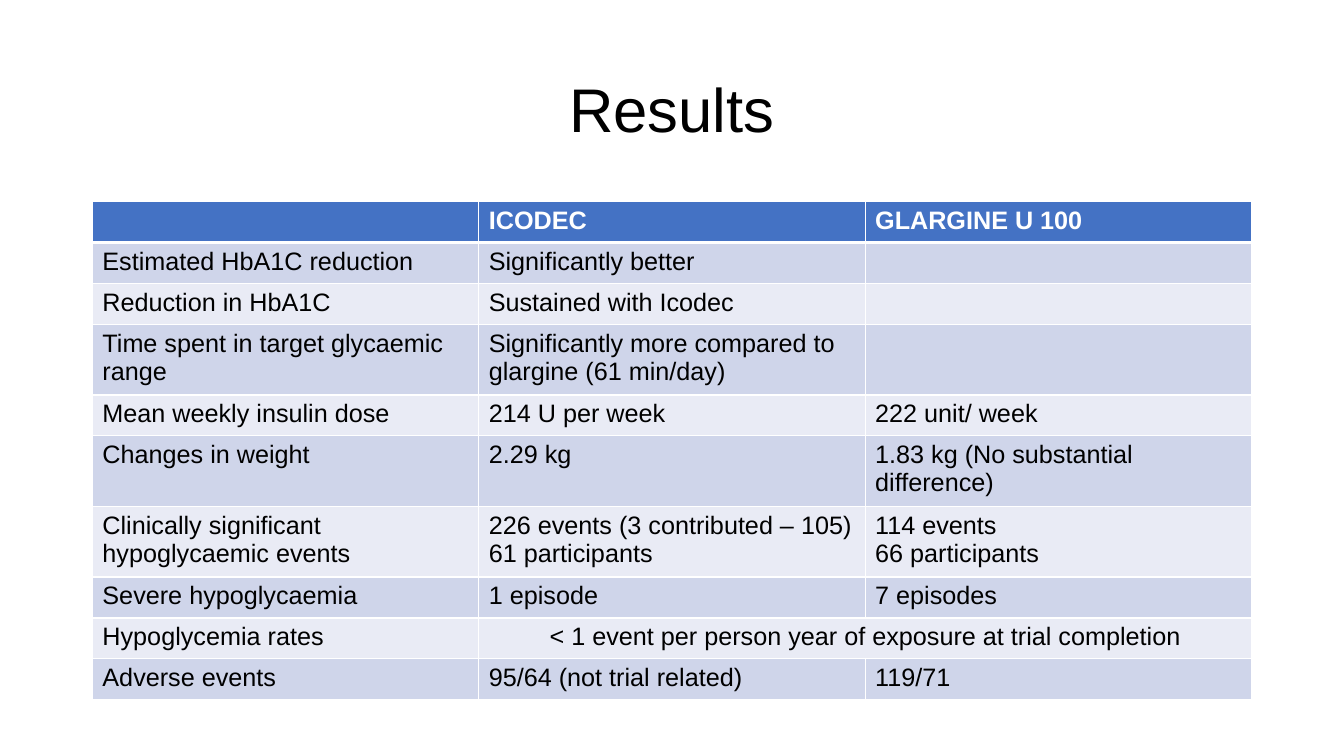
"""Build the Results slide comparing Icodec with Glargine U 100."""
import pptx
import pptx.dml.color
import pptx.enum.text
import pptx.oxml
import pptx.oxml.ns
import pptx.util

PIXEL = 9525
COLORS = {
    "text": "000000",
    "header": "4472C4",
    "odd": "CFD5EA",
    "even": "E9EBF5",
    "white": "FFFFFF",
}
CENTER = pptx.enum.text.PP_ALIGN.CENTER
LEFT = pptx.enum.text.PP_ALIGN.LEFT
RATES_ROW = 8
RESULTS = [
    ("", "ICODEC", "GLARGINE U 100"),
    ("Estimated HbA1C reduction", "Significantly better", ""),
    ("Reduction in HbA1C", "Sustained with Icodec", ""),
    ("Time spent in target glycaemic range",
     "Significantly more compared to glargine (61 min/day)", ""),
    ("Mean weekly insulin dose", "214 U per week", "222 unit/ week"),
    ("Changes in weight", "2.29 kg", "1.83 kg (No substantial difference)"),
    ("Clinically significant hypoglycaemic events",
     "226 events (3 contributed – 105)\n61 participants",
     "114 events\n66 participants"),
    ("Severe hypoglycaemia", "1 episode", "7 episodes"),
    ("Hypoglycemia rates",
     "< 1 event per person year of exposure at trial completion", ""),
    ("Adverse events", "95/64 (not trial related)", "119/71"),
]


def px(*lengths):
    """Turn whole pixels into EMU lengths."""
    return [pptx.util.Emu(length * PIXEL) for length in lengths]


def rgb(name):
    """Look up a named colour."""
    return pptx.dml.color.RGBColor.from_string(COLORS[name])


def write_text(text_frame, text, size, color="text", bold=False, **paragraph_format):
    """Fill a text frame and format every paragraph and run."""
    text_frame.text = text
    font_format = {"name": "Arial", "size": pptx.util.Pt(size), "bold": bold}
    for paragraph in text_frame.paragraphs:
        for name, value in paragraph_format.items():
            setattr(paragraph, name, value)
        for run in paragraph.runs:
            for name, value in font_format.items():
                setattr(run.font, name, value)
            run.font.color.rgb = rgb(color)


def add_title(slide, text):
    """Add the centred slide title."""
    text_frame = slide.shapes.add_textbox(*px(88, 38, 1104, 139)).text_frame
    frame_format = {
        "word_wrap": True,
        "vertical_anchor": pptx.enum.text.MSO_ANCHOR.MIDDLE,
    }
    for name, value in frame_format.items():
        setattr(text_frame, name, value)
    write_text(text_frame, text, 44, alignment=CENTER, line_spacing=0.9)


def add_borders(cell, widths):
    """Draw white cell borders from a dict of side and point width."""
    properties = cell._tc.get_or_add_tcPr()
    for side, width in widths.items():
        properties.append(pptx.oxml.parse_xml(
            f'<a:ln{side} {pptx.oxml.ns.nsdecls("a")} w="{pptx.util.Pt(width)}">'
            f'<a:solidFill><a:srgbClr val="{COLORS["white"]}"/></a:solidFill>'
            f'</a:ln{side}>'))


def format_cell(cell, row_index):
    """Give a cell its borders and row fill."""
    add_borders(cell, {
        "L": 1,
        "R": 1,
        "T": 3 if row_index == 1 else 1,
        "B": 3 if row_index == 0 else 1,
    })
    fill_name = "odd" if row_index % 2 else "even"
    cell.fill.solid()
    cell.fill.fore_color.rgb = rgb("header" if row_index == 0 else fill_name)


def add_results_table(slide):
    """Add the banded table of trial results."""
    row_height = 39
    frame = slide.shapes.add_table(
        len(RESULTS), 3, *px(88, 192, 1104, row_height * len(RESULTS)))
    table = frame.table
    for column in table.columns:
        column.width = px(368)[0]
    for row_index, texts in enumerate(RESULTS):
        table.rows[row_index].height = px(row_height)[0]
        is_header = row_index == 0
        for column_index, text in enumerate(texts):
            cell = table.cell(row_index, column_index)
            is_rate = row_index == RATES_ROW and column_index > 0
            write_text(cell.text_frame, text, 18,
                       color="white" if is_header else "text",
                       bold=is_header,
                       alignment=CENTER if is_rate else LEFT)
            format_cell(cell, row_index)
    table.cell(RATES_ROW, 1).merge(table.cell(RATES_ROW, 2))


def main():
    """Create and save the presentation."""
    presentation = pptx.Presentation()
    presentation.slide_width, presentation.slide_height = px(1280, 720)
    slide = presentation.slides.add_slide(presentation.slide_layouts[6])
    add_title(slide, "Results")
    add_results_table(slide)
    presentation.save("out.pptx")


if __name__ == "__main__":
    main()
